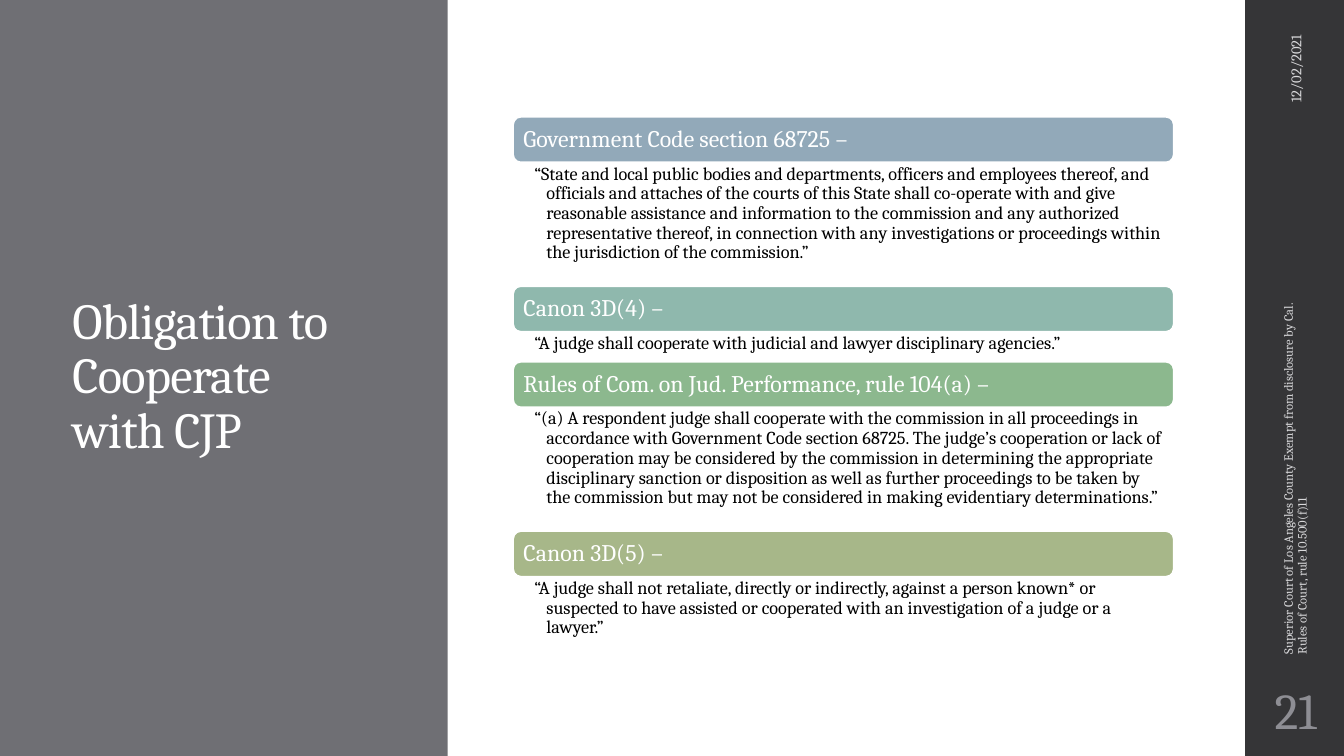
"""Build the slide on the obligation to cooperate with the commission."""
from dataclasses import dataclass

from pptx import Presentation
from pptx import util as u
from pptx.dml.color import RGBColor
from pptx.enum import shapes, text


@dataclass(frozen=True)
class Theme:
    """Colours and type sizes of the slide."""
    font: str = "Cambria"
    white: str = "FFFFFF"
    black: str = "000000"
    title_panel: str = "6F6F74"
    sidebar: str = "353537"
    footer: str = "D9D9DB"
    number: str = "8E8E94"
    bars: tuple = ("92A9B9", "8FB8AD", "8CB88E", "A7B789")
    large: float = 36
    heading: float = 17
    quote: float = 13
    date: float = 10.5
    small: float = 9


THEME = Theme()
LEFT, TOP, WIDTH, BAR_HEIGHT = 5.09, 1.16, 6.55, 0.45
SECTIONS = (
    ("Government Code section 68725 –", 1.23,
     "“State and local public bodies and departments, officers and employees thereof, and "
     "officials and attaches of the courts of this State shall co-operate with and give "
     "reasonable assistance and information to the commission and any authorized "
     "representative thereof, in connection with any investigations or proceedings within "
     "the jurisdiction of the commission.”"),
    ("Canon 3D(4) –", 0.3,
     "“A judge shall cooperate with judicial and lawyer disciplinary agencies.”"),
    ("Rules of Com. on Jud. Performance, rule 104(a) –", 1.23,
     "“(a) A respondent judge shall cooperate with the commission in all proceedings in "
     "accordance with Government Code section 68725. The judge’s cooperation or lack "
     "of cooperation may be considered by the commission in determining the "
     "appropriate disciplinary sanction or disposition as well as further proceedings to "
     "be taken by the commission but may not be considered in making evidentiary "
     "determinations.”"),
    ("Canon 3D(5) –", 0.63,
     "“A judge shall not retaliate, directly or indirectly, against a person known* or "
     "suspected to have assisted or cooperated with an investigation of a judge or a "
     "lawyer.”"),
)


def set_all(target, values):
    """Set every attribute named in values on the target."""
    for name, value in values.items():
        setattr(target, name, value)


def write(box, words, size, color, margins=(0.1, 0.05, 0.1, 0.05),
          anchor=text.MSO_ANCHOR.MIDDLE, **para_format):
    """Put one formatted paragraph into a shape and return it."""
    frame = box.text_frame
    sides = ("margin_left", "margin_top", "margin_right", "margin_bottom")
    set_all(frame, {"word_wrap": True, "vertical_anchor": anchor,
                    **dict(zip(sides, map(u.Inches, margins)))})
    para = frame.paragraphs[0]
    set_all(para, {"alignment": text.PP_ALIGN.LEFT, "line_spacing": 0.9, **para_format})
    span = para.add_run()
    span.text = words
    set_all(span.font, {"name": THEME.font, "size": u.Pt(size)})
    span.font.color.rgb = RGBColor.from_string(color)
    return para


def add_label(page, place, words, size, color, rotation=0, **options):
    """Add a text box with one paragraph and return the paragraph."""
    box = page.shapes.add_textbox(*map(u.Inches, place))
    box.rotation = rotation
    return write(box, words, size, color, **options)


def add_block(page, place, color, kind=shapes.MSO_SHAPE.RECTANGLE):
    """Add a filled shape without outline or shadow."""
    block = page.shapes.add_shape(kind, *map(u.Inches, place))
    block.shadow.inherit = False
    block.fill.solid()
    block.fill.fore_color.rgb = RGBColor.from_string(color)
    block.line.fill.background()
    return block


def add_section(page, top, color, heading, quote_height, quote):
    """Add a heading bar with its quotation and return the bottom edge."""
    bar = add_block(page, (LEFT, top, WIDTH, BAR_HEIGHT), color,
                    shapes.MSO_SHAPE.ROUNDED_RECTANGLE)
    bar.line.color.rgb = RGBColor.from_string(THEME.white)
    bar.line.width = u.Pt(1.1)
    write(bar, heading, THEME.heading, THEME.white, margins=(0.08, 0.05, 0.08, 0.05))
    quote_top = top + BAR_HEIGHT
    para = add_label(page, (LEFT, quote_top, WIDTH, quote_height), quote, THEME.quote,
                     THEME.black, margins=(0.21, 0.02, 0.13, 0.02),
                     anchor=text.MSO_ANCHOR.TOP)
    indents = {"marL": u.Inches(0.12), "indent": u.Inches(-0.12)}
    for name, value in indents.items():
        para._p.get_or_add_pPr().set(name, str(value))
    return quote_top + quote_height


def add_title_panel(page):
    """Add the grey panel and the slide title."""
    add_block(page, (0, 0, 4.44, 7.5), THEME.title_panel)
    title = add_label(page, (0.62, 0.91, 2.97, 5.67), "Obligation to Cooperate with CJP",
                      THEME.large, THEME.white)
    title.runs[0].font._element.set("spc", "-50")


def add_sidebar(page):
    """Add the dark strip with date, footer and slide number."""
    add_block(page, (12.35, 0, 1, 7.5), THEME.sidebar)
    after = u.Pt(6)
    add_label(page, (11.81, 1.09, 2.08, 0.4), "12/02/2021", THEME.date, THEME.footer,
              rotation=270, alignment=text.PP_ALIGN.RIGHT, line_spacing=1.0,
              space_after=after)
    add_label(page, (10.89, 4.43, 3.92, 0.4),
              "Superior Court of Los Angeles County Exempt from disclosure by Cal. "
              "Rules of Court, rule 10.500(f)11",
              THEME.small, THEME.footer, rotation=270, space_after=after)
    add_label(page, (12.35, 6.75, 1, 0.65), "21", THEME.large, THEME.number,
              margins=(0.05,) * 4, alignment=text.PP_ALIGN.CENTER, space_after=after)


def main():
    """Build and save the deck."""
    deck = Presentation()
    set_all(deck, {"slide_width": u.Inches(13.33), "slide_height": u.Inches(7.5)})
    page = deck.slides.add_slide(deck.slide_layouts[6])
    add_title_panel(page)
    add_sidebar(page)
    top = TOP
    for color, section in zip(THEME.bars, SECTIONS):
        top = add_section(page, top, color, *section)
    deck.save("out.pptx")


if __name__ == "__main__":
    main()
